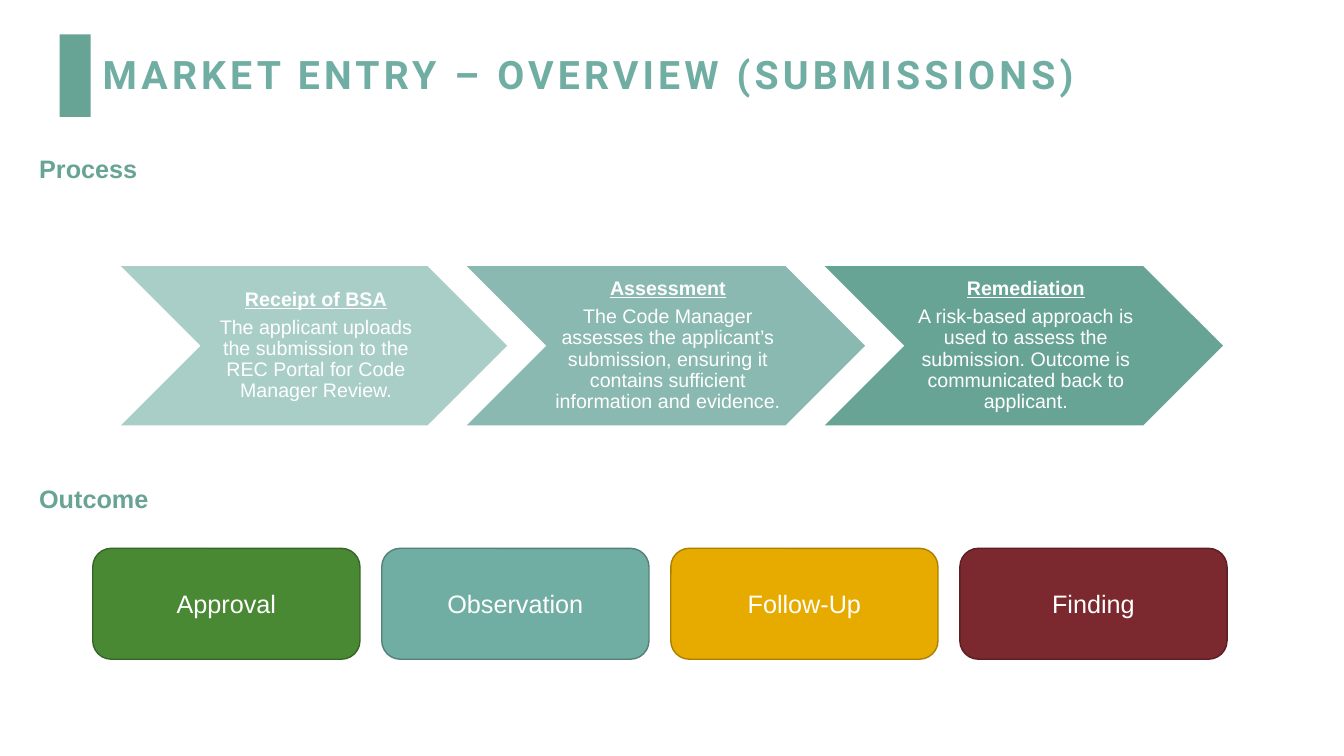
"""Build the market entry submissions overview slide."""
from dataclasses import dataclass

from pptx import Presentation
from pptx.dml.color import RGBColor
from pptx.enum.shapes import MSO_SHAPE
from pptx.enum.text import MSO_ANCHOR, PP_ALIGN
from pptx.util import Inches, Pt

RECTANGLE = MSO_SHAPE.RECTANGLE
CHEVRON = MSO_SHAPE.CHEVRON
ROUNDED = MSO_SHAPE.ROUNDED_RECTANGLE
TOP, MIDDLE = MSO_ANCHOR.TOP, MSO_ANCHOR.MIDDLE
LEFT, CENTER = PP_ALIGN.LEFT, PP_ALIGN.CENTER

TITLE = "MARKET ENTRY – OVERVIEW (SUBMISSIONS)"
HEADINGS = [("Process", 1.51), ("Outcome", 4.78)]
STEPS = [
    ("Receipt of BSA",
     "The applicant uploads the submission to the REC Portal for Code Manager Review.",
     3.83, "A9CEC8"),
    ("Assessment",
     "The Code Manager assesses the applicant’s submission, ensuring it contains "
     "sufficient information and evidence.",
     3.95, "8AB9B1"),
    ("Remediation",
     "A risk-based approach is used to assess the submission. Outcome is "
     "communicated back to applicant.",
     3.95, "68A495"),
]
OUTCOMES = [
    ("Approval", "498934", "366526"),
    ("Observation", "70ADA3", "538079"),
    ("Follow-Up", "E7AB00", "AB7F00"),
    ("Finding", "7B282E", "5B1E22"),
]


@dataclass(frozen=True)
class Theme:
    title_font: str = "Roboto"
    body_font: str = "Arial"
    title_color: str = "70ADA3"
    accent: str = "68A495"
    on_fill: str = "FFFFFF"
    title_size: int = 28
    heading_size: int = 18
    step_size: int = 14
    tracking: str = "300"


THEME = Theme()
STEP_LEFT, STEP_TOP, STEP_HEIGHT, STEP_OVERLAP = 1.2, 2.64, 1.58, 0.4
STEP_INSETS = (0.06, 0.02, 0.02, 0.02)
OUTCOME_LEFT, OUTCOME_RIGHT, OUTCOME_TOP = 0.92, 12.17, 5.44
OUTCOME_WIDTH, OUTCOME_HEIGHT = 2.65, 1.1


def add_panel(slide, kind, box, fill, line=None):
    panel = slide.shapes.add_shape(kind, *map(Inches, box))
    panel.shadow.inherit = False
    panel.fill.solid()
    panel.fill.fore_color.rgb = RGBColor.from_string(fill)
    if line:
        panel.line.color.rgb = RGBColor.from_string(line)
        panel.line.width = Pt(1)
    else:
        panel.line.fill.background()
    return panel


def prepare(frame, anchor, insets=(0.1, 0.05, 0.1, 0.05)):
    frame.word_wrap = True
    frame.vertical_anchor = anchor
    (frame.margin_left, frame.margin_top,
     frame.margin_right, frame.margin_bottom) = map(Inches, insets)
    return frame


def write(paragraph, text, size, color, font=THEME.body_font, bold=False,
          underline=False, align=LEFT, spacing=0.9):
    run = paragraph.add_run()
    run.text = text
    paragraph.alignment = align
    paragraph.line_spacing = spacing
    paragraph.font.name = font
    paragraph.font.size = Pt(size)
    paragraph.font.bold = bold
    paragraph.font.underline = underline
    paragraph.font.color.rgb = RGBColor.from_string(color)
    return run


def add_label(slide, box, anchor, text, size, color, font=THEME.body_font):
    label = slide.shapes.add_textbox(*map(Inches, box))
    frame = prepare(label.text_frame, anchor)
    return write(frame.paragraphs[0], text, size, color, font, bold=True)


def add_header(slide):
    add_panel(slide, RECTANGLE, (0.59, 0.34, 0.31, 0.82), THEME.accent)
    title = add_label(slide, (0.92, 0.4, 10.15, 0.72), MIDDLE, TITLE,
                      THEME.title_size, THEME.title_color, THEME.title_font)
    title._r.get_or_add_rPr().set("spc", THEME.tracking)
    for heading, top in HEADINGS:
        add_label(slide, (0.29, top, 12.75, 0.4), TOP, heading,
                  THEME.heading_size, THEME.accent)


def add_steps(slide):
    left = STEP_LEFT
    for name, detail, width, fill in STEPS:
        step = add_panel(slide, CHEVRON, (left, STEP_TOP, width, STEP_HEIGHT), fill)
        frame = prepare(step.text_frame, MIDDLE, STEP_INSETS)
        write(frame.paragraphs[0], name, THEME.step_size, THEME.on_fill,
              bold=True, underline=True, align=CENTER)
        write(frame.add_paragraph(), detail, THEME.step_size, THEME.on_fill,
              align=CENTER)
        for paragraph in frame.paragraphs:
            paragraph.space_after = Pt(0.35 * THEME.step_size)
        left += width - STEP_OVERLAP


def add_outcomes(slide):
    pitch = (OUTCOME_RIGHT - OUTCOME_WIDTH - OUTCOME_LEFT) / (len(OUTCOMES) - 1)
    for index, (name, fill, line) in enumerate(OUTCOMES):
        box = (OUTCOME_LEFT + index * pitch, OUTCOME_TOP, OUTCOME_WIDTH, OUTCOME_HEIGHT)
        outcome = add_panel(slide, ROUNDED, box, fill, line)
        frame = prepare(outcome.text_frame, MIDDLE)
        write(frame.paragraphs[0], name, THEME.heading_size, THEME.on_fill,
              align=CENTER, spacing=1.0)


def main():
    deck = Presentation()
    deck.slide_width, deck.slide_height = Inches(13.33), Inches(7.5)
    slide = deck.slides.add_slide(deck.slide_layouts[6])
    add_header(slide)
    add_steps(slide)
    add_outcomes(slide)
    deck.save("out.pptx")


if __name__ == "__main__":
    main()
